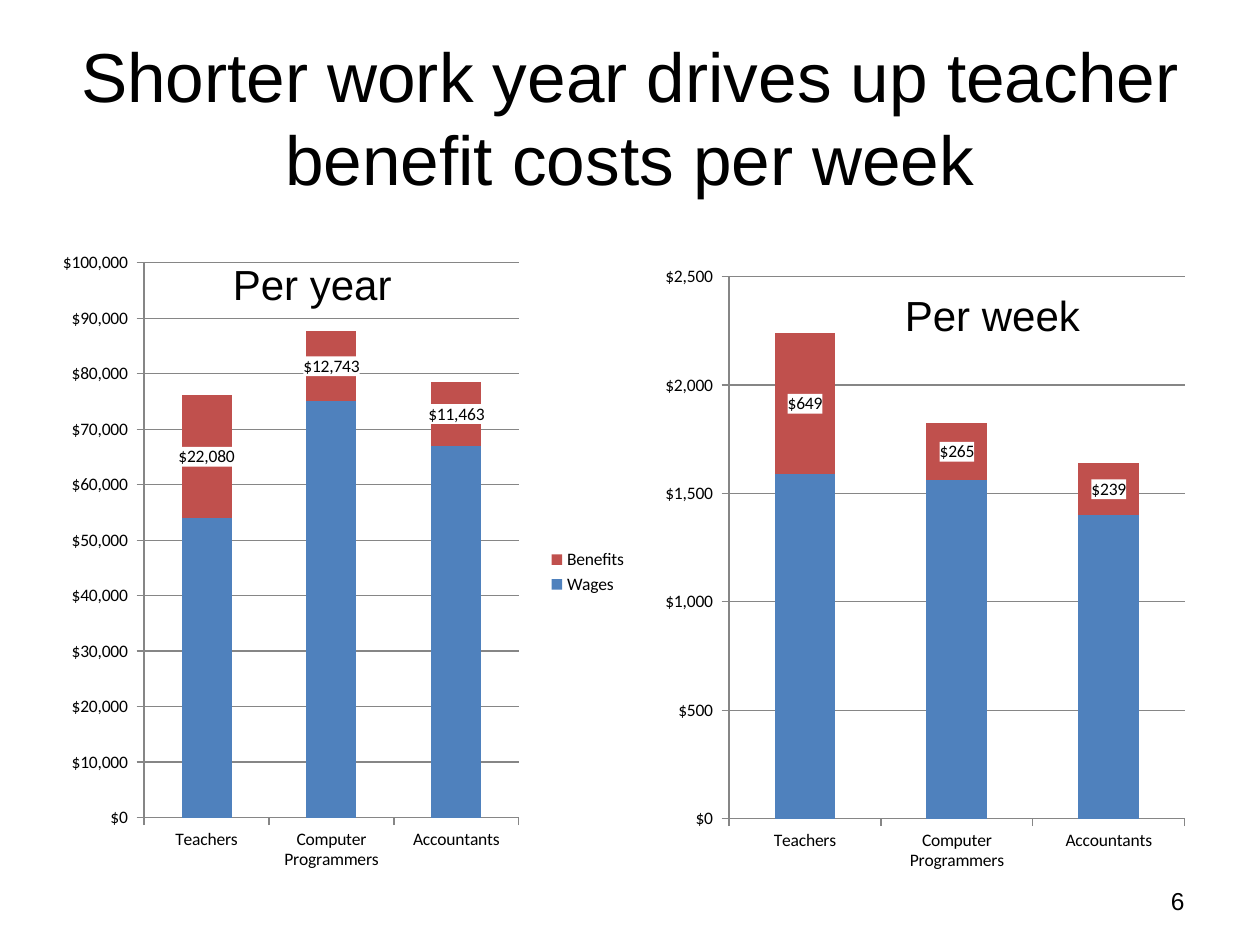
"""Build a slide comparing wages and benefits per year and per week."""
from lxml.etree import fromstring
from pptx import Presentation
from pptx.chart.data import CategoryChartData
from pptx.dml.color import RGBColor
from pptx.enum.chart import XL_CHART_TYPE as ChartType, XL_LABEL_POSITION as LabelPos
from pptx.enum.chart import XL_LEGEND_POSITION as LegendPos, XL_TICK_MARK as Tick
from pptx.enum.text import MSO_ANCHOR as Anchor, MSO_AUTO_SIZE as AutoSize, PP_ALIGN as Align
from pptx.oxml.ns import nsdecls, qn
from pptx.util import Pt


def color(hex_text):
    return RGBColor.from_string(hex_text)


def write(frame, text, size, align, anchor):
    for name, value in {"word_wrap": True, "vertical_anchor": anchor}.items():
        setattr(frame, name, value)
    frame.text = text
    paragraph = frame.paragraphs[0]
    paragraph.alignment = align
    font = paragraph.runs[0].font
    for name, value in {"size": Pt(size), "name": "Arial"}.items():
        setattr(font, name, value)
    font.color.rgb = color("000000")


deck = Presentation()
deck.slide_width, deck.slide_height = Pt(720), Pt(540)
slide = deck.slides.add_slide(deck.slide_layouts[5])

headline = slide.shapes.title
headline_place = {"left": 36, "top": 21.6, "width": 648, "height": 90}
for name, value in headline_place.items():
    setattr(headline, name, Pt(value))
write(headline.text_frame, "Shorter work year drives up teacher benefit costs per week",
      39.6, Align.CENTER, Anchor.MIDDLE)

jobs = ["Teachers", "Computer Programmers", "Accountants"]
dollars = '_("$"* #,##0_);_("$"* \\(#,##0\\);_("$"* 0_);_(@_)'
no_fill = f'<c:spPr {nsdecls("c", "a")}><a:noFill/><a:ln><a:noFill/></a:ln></c:spPr>'
white_fill = (f'<c:spPr {nsdecls("c", "a")}><a:solidFill><a:srgbClr val="FFFFFF"/>'
              '</a:solidFill></c:spPr>')

weekly = {
    "place": (378, 144, 306.72, 372.24),
    "plot": {"x": 0.125, "y": 0.038, "w": 0.85, "h": 0.832},
    "scale": {"minimum_scale": 0, "maximum_scale": 2500, "major_unit": 500},
    "series": {"Series 1": (1590, 1560, 1400), "Series 2": (649, 265, 239)},
    "legend": False,
}
yearly = {
    "place": (18, 144, 347.76, 365.76),
    "plot": {"x": 0.185, "y": 0.017, "w": 0.616, "h": 0.867},
    "scale": {"minimum_scale": 0, "maximum_scale": 100000, "major_unit": 10000},
    "series": {"Wages": (54000, 75000, 67000), "Benefits": (22080, 12743, 11463)},
    "legend": True,
}
captions = [("Per year", 126, 144), ("Per week", 510, 162)]

for period in (weekly, yearly):
    if period is yearly:
        for text, left, top in captions:
            caption = slide.shapes.add_textbox(Pt(left), Pt(top), Pt(144), Pt(36.72))
            write(caption.text_frame, text, 24, Align.LEFT, Anchor.TOP)
            caption.text_frame.auto_size = AutoSize.SHAPE_TO_FIT_TEXT

    pay = CategoryChartData()
    pay.categories = jobs
    for name, values in period["series"].items():
        pay.add_series(name, values)
    chart = slide.shapes.add_chart(
        ChartType.COLUMN_STACKED, *map(Pt, period["place"]), pay).chart
    chart.has_title = False
    for name, value in {"size": Pt(10), "name": "Calibri"}.items():
        setattr(chart.font, name, value)
    chart.font.color.rgb = color("000000")

    chart.has_legend = period["legend"]
    if chart.has_legend:
        chart.legend.position = LegendPos.RIGHT
        chart.legend.include_in_layout = False

    bars = chart.plots[0]
    for name, value in {"gap_width": 150, "overlap": 100, "vary_by_categories": False}.items():
        setattr(bars, name, value)
    for series, fill in zip(bars.series, ("4F81BD", "C0504D")):
        series.format.fill.solid()
        series.format.fill.fore_color.rgb = color(fill)
    labels = bars.series[1].data_labels
    label_format = {"show_value": True, "number_format": '"$"#,##0',
                    "number_format_is_linked": False, "position": LabelPos.CENTER}
    for name, value in label_format.items():
        setattr(labels, name, value)

    amounts = chart.value_axis
    for name, value in period["scale"].items():
        setattr(amounts, name, value)
    amounts.has_major_gridlines = True
    amounts.tick_labels.number_format = dollars
    amounts.tick_labels.number_format_is_linked = False
    for axis in (amounts, chart.category_axis):
        axis.major_tick_mark = Tick.OUTSIDE
        axis.minor_tick_mark = Tick.NONE
    for ruled in (amounts, chart.category_axis, amounts.major_gridlines):
        ruled.format.line.color.rgb = color("868686")
        ruled.format.line.width = Pt(0.75)

    root = chart.element
    area = next(root.iter(qn("c:plotArea")))
    for old_layout in area.findall(qn("c:layout")):
        area.remove(old_layout)
    sides = "".join(f'<c:{side}Mode val="edge"/>' for side in "xy")
    sides += "".join(f'<c:{side} val="{share}"/>' for side, share in period["plot"].items())
    area.insert(0, fromstring(
        f'<c:layout {nsdecls("c")}><c:manualLayout><c:layoutTarget val="inner"/>'
        f'{sides}</c:manualLayout></c:layout>'))
    area.append(fromstring(no_fill))
    root.find(qn("c:chart")).addnext(fromstring(no_fill))
    label_node = next(root.iter(qn("c:dLbls")))
    label_node.find(qn("c:numFmt")).addnext(fromstring(white_fill))

page_number = slide.shapes.add_textbox(Pt(516.24), Pt(500.4), Pt(167.76), Pt(28.8))
write(page_number.text_frame, "6", 14, Align.RIGHT, Anchor.MIDDLE)

deck.save("out.pptx")
